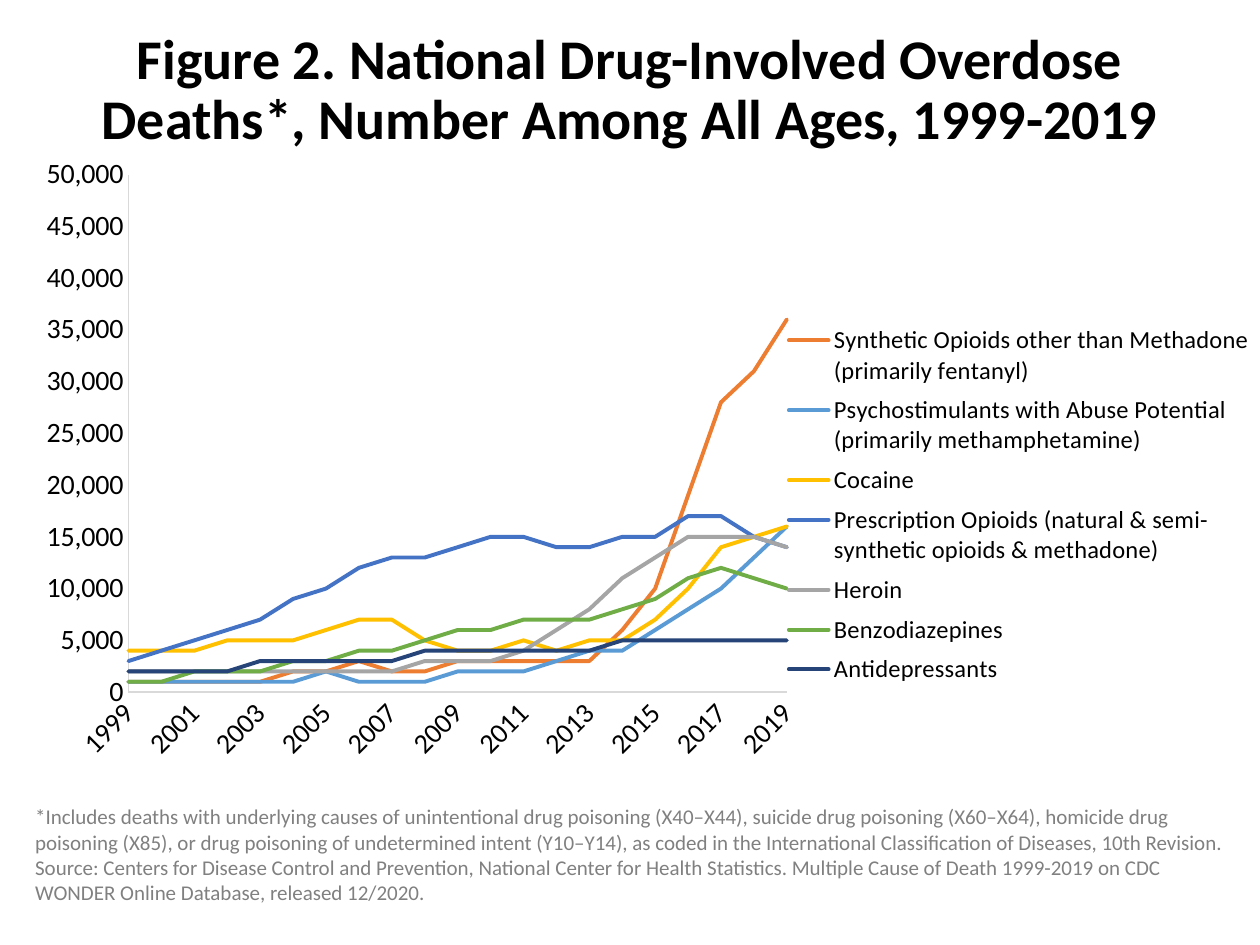
from lxml import etree
from pptx import Presentation
from pptx import util as u
from pptx.chart.data import CategoryChartData
from pptx.dml.color import RGBColor
from pptx.enum import chart as ch, text
from pptx.oxml import parse_xml
from pptx.oxml.ns import nsdecls, qn

Pt = u.Pt


def rgb(value):
    return RGBColor.from_string(value)


def write(frame, paragraphs, size, color, bold=False, align=text.PP_ALIGN.LEFT,
          spacing=1.0, anchor=text.MSO_ANCHOR.TOP):
    frame.word_wrap = True
    frame.auto_size = text.MSO_AUTO_SIZE.NONE
    frame.vertical_anchor = anchor
    for i, wording in enumerate(paragraphs):
        paragraph = frame.paragraphs[0] if i == 0 else frame.add_paragraph()
        paragraph.alignment = align
        paragraph.line_spacing = spacing
        run = paragraph.add_run()
        run.text = wording
        run.font.name = "Calibri"
        run.font.size = Pt(size)
        run.font.bold = bold
        run.font.color.rgb = rgb(color)


deck = Presentation()
deck.slide_width, deck.slide_height = Pt(720), Pt(540)
slide = deck.slides.add_slide(deck.slide_layouts[5])

title = slide.shapes.title
title.left, title.top, title.width, title.height = Pt(20), Pt(0), Pt(680), Pt(104.4)
write(title.text_frame,
      ["Figure 2. National Drug-Involved Overdose Deaths*, Number Among All Ages, 1999-2019"],
      32, "000000", bold=True, align=text.PP_ALIGN.CENTER, spacing=0.9,
      anchor=text.MSO_ANCHOR.MIDDLE)

thousands_by_drug = [
    ("Synthetic Opioids other than Methadone (primarily fentanyl)", "ED7D31",
     [1, 1, 1, 1, 1, 2, 2, 3, 2, 2, 3, 3, 3, 3, 3, 6, 10, 19, 28, 31, 36]),
    ("Psychostimulants with Abuse Potential (primarily methamphetamine)", "5B9BD5",
     [1, 1, 1, 1, 1, 1, 2, 1, 1, 1, 2, 2, 2, 3, 4, 4, 6, 8, 10, 13, 16]),
    ("Cocaine", "FFC000",
     [4, 4, 4, 5, 5, 5, 6, 7, 7, 5, 4, 4, 5, 4, 5, 5, 7, 10, 14, 15, 16]),
    ("Prescription Opioids (natural & semi-synthetic opioids & methadone)", "4472C4",
     [3, 4, 5, 6, 7, 9, 10, 12, 13, 13, 14, 15, 15, 14, 14, 15, 15, 17, 17, 15, 14]),
    ("Heroin", "A5A5A5",
     [2, 2, 2, 2, 2, 2, 2, 2, 2, 3, 3, 3, 4, 6, 8, 11, 13, 15, 15, 15, 14]),
    ("Benzodiazepines", "70AD47",
     [1, 1, 2, 2, 2, 3, 3, 4, 4, 5, 6, 6, 7, 7, 7, 8, 9, 11, 12, 11, 10]),
    ("Antidepressants", "264478",
     [2, 2, 2, 2, 3, 3, 3, 3, 3, 4, 4, 4, 4, 4, 4, 5, 5, 5, 5, 5, 5]),
]
death_counts = CategoryChartData(number_format="#,##0")
death_counts.categories = [str(year) for year in range(1999, 2020)]
for drug, color, thousands in thousands_by_drug:
    death_counts.add_series(drug, [n * 1000 for n in thousands])

deaths = slide.shapes.add_chart(ch.XL_CHART_TYPE.LINE, Pt(8.64), Pt(90), Pt(711.36), Pt(360.72),
                                death_counts).chart
deaths.has_title = False
deaths.has_legend = True
legend = deaths.legend
legend.position = ch.XL_LEGEND_POSITION.BOTTOM
legend.include_in_layout = False
years, counts = deaths.category_axis, deaths.value_axis

for font, size in [(deaths.font, 16), (years.tick_labels.font, 16),
                   (counts.tick_labels.font, 16), (legend.font, 14)]:
    font.name = "Calibri"
    font.size = Pt(size)
    font.bold = False
    font.color.rgb = rgb("000000")

for axis in (years, counts):
    axis.has_major_gridlines = False
    axis.major_tick_mark = axis.minor_tick_mark = ch.XL_TICK_MARK.NONE
    axis.format.line.color.rgb = rgb("D9D9D9")
    axis.format.line.width = Pt(0.75)
counts.minimum_scale, counts.maximum_scale, counts.major_unit = 0, 50000, 5000
counts.tick_labels.number_format = "#,##0"
counts.tick_labels.number_format_is_linked = False

deaths.plots[0].vary_by_categories = False
for series, (drug, color, thousands) in zip(deaths.plots[0].series, thousands_by_drug):
    series.smooth = False
    series.marker.style = ch.XL_MARKER_STYLE.NONE
    series.format.line.color.rgb = rgb(color)
    series.format.line.width = Pt(2.25)
    series.format.line._get_or_add_ln().set("cap", "rnd")

year_xml, count_xml = years._element, counts._element
year_xml.find(qn("c:txPr")).find(qn("a:bodyPr")).set("rot", "-2700000")
label_skip = etree.Element(qn("c:tickLblSkip"), val="2")
year_xml.find(qn("c:noMultiLvlLbl")).addprevious(label_skip)
for crossing in count_xml.findall(qn("c:crossBetween")):
    count_xml.remove(crossing)
count_xml.find(qn("c:crosses")).addnext(etree.Element(qn("c:crossBetween"), val="midCat"))

plot_area = year_xml.getparent()
for part, index, target, box in [
    (plot_area, 0, '<c:layoutTarget val="inner"/>', (0.091, 0.026, 0.529, 0.821)),
    (legend._element, 1, "", (0.62, 0.25, 0.38, 0.6)),
]:
    for layout in part.findall(qn("c:layout")):
        part.remove(layout)
    modes = '<c:xMode val="edge"/><c:yMode val="edge"/>'
    sides = "".join(f'<c:{side} val="{value}"/>' for side, value in zip("xywh", box))
    part.insert(index, parse_xml(
        f'<c:layout {nsdecls("c")}><c:manualLayout>{target}{modes}{sides}'
        "</c:manualLayout></c:layout>"))

footnote = slide.shapes.add_textbox(Pt(13), Pt(455.8), Pt(695.5), Pt(65.5))
write(footnote.text_frame, [
    "*Includes deaths with underlying causes of unintentional drug poisoning (X40–X44), suicide "
    "drug poisoning (X60–X64), homicide drug poisoning (X85), or drug poisoning of undetermined "
    "intent (Y10–Y14), as coded in the International Classification of Diseases, 10th Revision.",
    "Source: Centers for Disease Control and Prevention, National Center for Health Statistics. "
    "Multiple Cause of Death 1999-2019 on CDC WONDER Online Database, released 12/2020.",
], 12, "808080")

deck.save("out.pptx")
